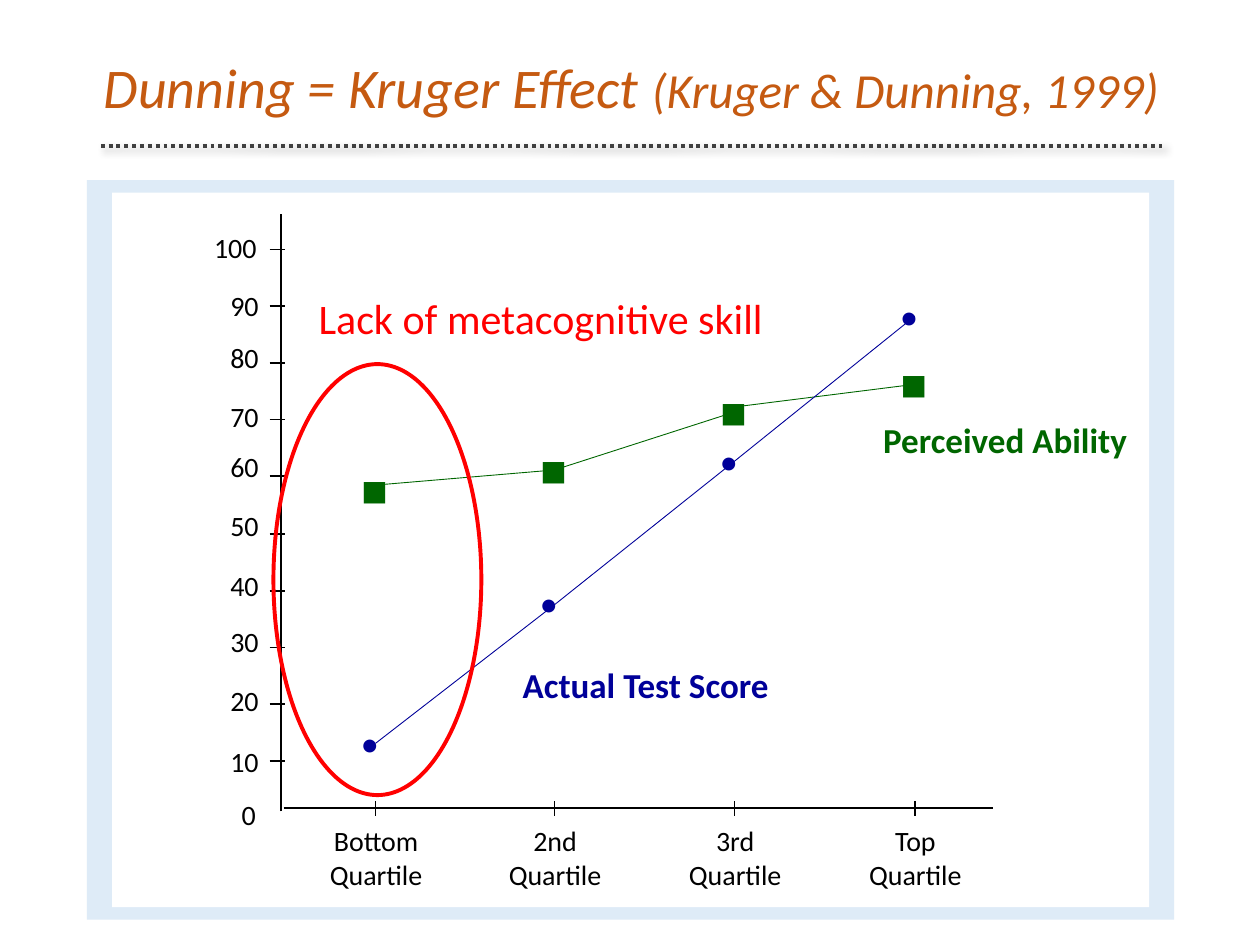
from lxml import etree
from pptx import Presentation
from pptx.dml.color import RGBColor
from pptx.enum.dml import MSO_LINE
from pptx.enum.shapes import MSO_CONNECTOR, MSO_SHAPE
from pptx.enum.text import MSO_ANCHOR, MSO_AUTO_SIZE, PP_ALIGN
from pptx.oxml.ns import qn
from pptx.util import Emu, Pt

LEFT, CENTER = PP_ALIGN.LEFT, PP_ALIGN.CENTER
MIDDLE = MSO_ANCHOR.MIDDLE
GROW = MSO_AUTO_SIZE.SHAPE_TO_FIT_TEXT
STRAIGHT = MSO_CONNECTOR.STRAIGHT
RECT, OVAL = MSO_SHAPE.RECTANGLE, MSO_SHAPE.OVAL
DOTTED = MSO_LINE.ROUND_DOT

PX = 9144  # 100 px to the inch
FONT = "Calibri"
COLORS = {
    "panel": "DEEBF7", "plot": "FFFFFF", "axis": "000000", "title": "C55A11",
    "rule": "404040", "actual": "000099", "perceived": "006600", "accent": "FF0000",
}

SCALE_LABELS = [(100, 25), (90, 71), (80, 112), (70, 159), (60, 199), (50, 246),
                (40, 293), (30, 338), (20, 385), (10, 433), (0, 475)]
QUARTILES = ["Bottom", "2nd", "3rd", "Top"]
# colour name, marker, marker tops, line segments as (start y, end y)
SERIES = [
    ("perceived", "■", [217, 201, 155, 133], [(232, 220), (220, 174), (170, 152)]),
    ("actual", "●", [419, 308, 195, 80], [(437, 327), (327, 213), (213, 98)]),
]


def px(*values):
    return [Emu(v * PX) for v in values]


def rgb(name):
    return RGBColor.from_string(COLORS[name])


def format_run(r, size, color, bold=None, italic=None):
    r.font.name, r.font.size = FONT, Pt(size)
    r.font.bold, r.font.italic = bold, italic
    r.font.color.rgb = rgb(color)


def add_label(s, box, text, size, color, bold=None, align=LEFT):
    tf = s.shapes.add_textbox(*px(*box)).text_frame
    tf.word_wrap, tf.auto_size = False, GROW
    tf.text = text
    for p in tf.paragraphs:
        p.alignment = align
        for r in p.runs:
            format_run(r, size, color, bold)


def add_line(s, x1, y1, x2, y2, color, width=1):
    """Draw a straight line and return it with its empty effect list."""
    line = s.shapes.add_connector(STRAIGHT, *px(x1, y1, x2, y2))
    line.line.color.rgb = rgb(color)
    line.line.width = Pt(width)
    effects = etree.SubElement(line._element.spPr, qn("a:effectLst"))
    return line, effects


def add_shape(s, kind, box, fill=None, outline=None):
    sp = s.shapes.add_shape(kind, *px(*box))
    sp.shadow.inherit = False
    if fill:
        sp.fill.solid()
        sp.fill.fore_color.rgb = rgb(fill)
    else:
        sp.fill.background()
    if outline:
        sp.line.color.rgb = rgb(outline)
        sp.line.width = Pt(2.25)
    else:
        sp.line.fill.background()


def build_title(s, x, y, w, h):
    title = s.shapes.title
    title.left, title.top, title.width, title.height = px(x, y, w, h)
    tf = title.text_frame
    tf.word_wrap, tf.vertical_anchor = True, MIDDLE
    p = tf.paragraphs[0]
    p.alignment, p.line_spacing = CENTER, 0.9
    for text, size in (("Dunning = Kruger Effect ", 32), ("(Kruger & Dunning, 1999)", 28)):
        r = p.add_run()
        r.text = text
        format_run(r, size, "title", italic=True)

    rule, effects = add_line(s, x + 10, y + 117, x + 852, y + 117, "rule", 2.25)
    rule.line.dash_style = DOTTED
    shadow = etree.SubElement(effects, qn("a:outerShdw"), blurRad=str(Pt(4)),
                              dist=str(Pt(3)), dir=str(45 * 60000), rotWithShape="0")
    black = etree.SubElement(shadow, qn("a:srgbClr"), val="000000")
    etree.SubElement(black, qn("a:alpha"), val="40000")


def build_panel(s, x, y, w, h):
    add_shape(s, RECT, (x, y, w, h), "panel")
    add_shape(s, RECT, (x + 20, y + 10, w - 40, h - 20), "plot")


def build_axes(s, x, y, columns):
    add_line(s, x + 134, y + 491, x + 134, y + 17, "axis")
    add_line(s, x + 136, y + 488, x + 699, y + 488, "axis")
    for value, top in SCALE_LABELS:
        text = str(value)
        width = 20 + 13 * len(text)
        left = x + 93 if value == 0 else x + 130 - width
        add_label(s, (left, y + top, width, 37), text, 16, "axis")
    for i in range(10):
        tick = y + 45 + round(45.1 * i)
        add_line(s, x + 125, tick, x + 137, tick, "axis")
    for col, name in zip(columns, QUARTILES):
        add_label(s, (col - 47, y + 496, 95, 64), f"{name}\nQuartile", 16, "axis", align=CENTER)
        add_line(s, col, y + 483, col, y + 495, "axis")


def build_series(s, y, columns, color, marker, tops, segments):
    for col, top in zip(columns, tops):
        add_label(s, (col - 21, y + top, 43, 37), marker, 16, color)
    for start, end, (y1, y2) in zip(columns, columns[1:], segments):
        add_line(s, start, y + y1, end, y + y2, color, 0.5)


def build_plot(s, x, y):
    columns = [x + 209 + round(142.5 * i) for i in range(len(QUARTILES))]
    build_axes(s, x, y, columns)
    for series in SERIES:
        build_series(s, y, columns, *series)
    add_label(s, (x + 602, y + 174, 215, 44), "Perceived Ability", 20, "perceived", bold=True)
    add_label(s, (x + 316, y + 369, 217, 44), "Actual Test Score", 20, "actual", bold=True)
    add_shape(s, OVAL, (x + 128, y + 136, 165, 342), outline="accent")
    add_label(s, (x + 154, y + 74, 380, 50), "Lack of metacognitive skill", 24, "accent")


def main():
    prs = Presentation()
    prs.slide_width, prs.slide_height = px(1000, 750)
    s = prs.slides.add_slide(prs.slide_layouts[5])
    build_panel(s, 69, 143, 863, 587)
    build_plot(s, 89, 153)
    build_title(s, 70, -1, 862, 145)
    prs.save("out.pptx")


if __name__ == "__main__":
    main()
